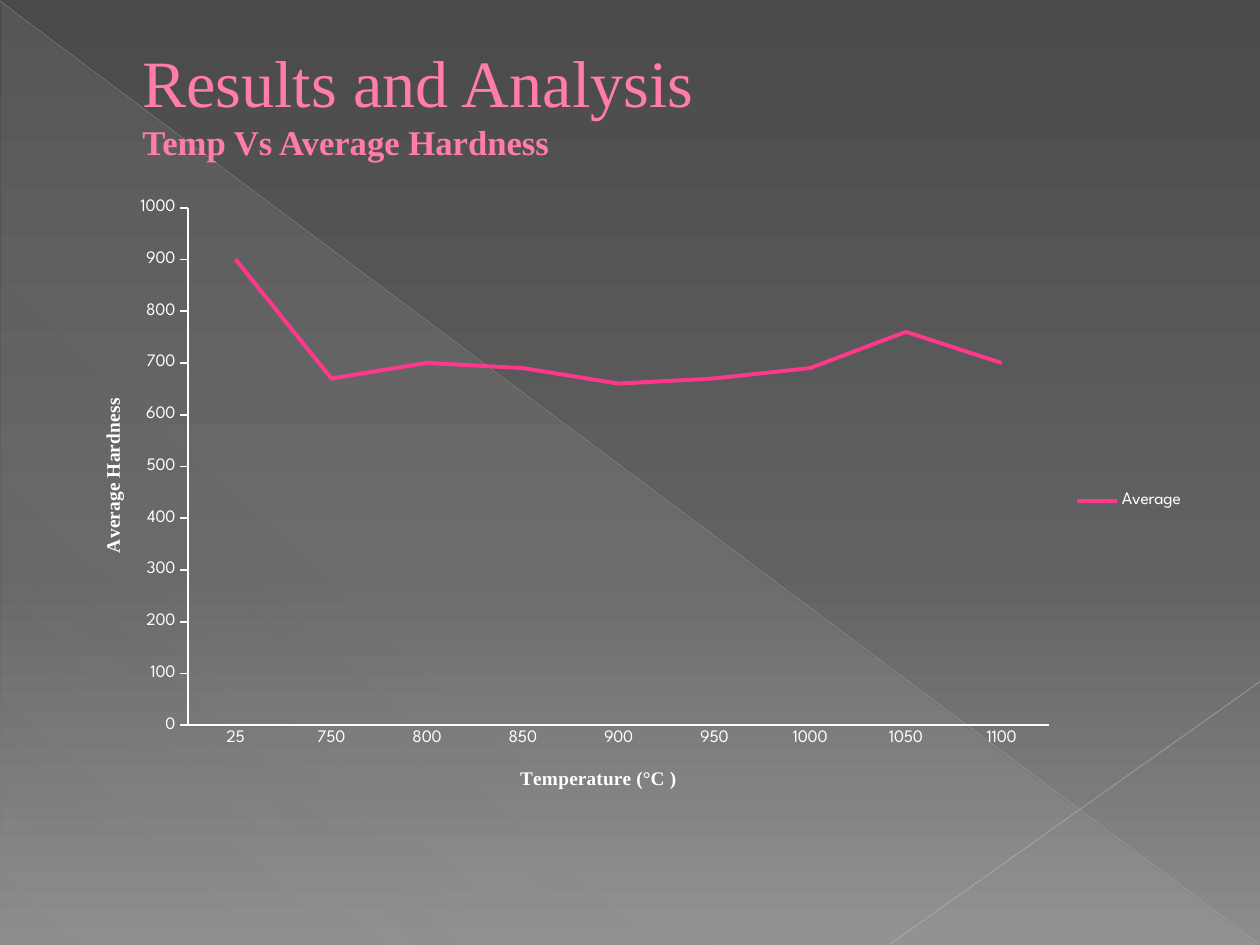
from dataclasses import dataclass

from lxml.etree import SubElement
from pptx import Presentation
from pptx.chart.data import CategoryChartData
from pptx.dml.color import RGBColor
from pptx.enum.chart import XL_CHART_TYPE, XL_LEGEND_POSITION, XL_TICK_MARK
from pptx.enum.shapes import MSO_CONNECTOR, MSO_SHAPE
from pptx.enum.text import MSO_ANCHOR
from pptx.oxml import parse_xml
from pptx.oxml.ns import nsdecls, qn
from pptx.util import Pt

COLORS = {
    "dark": "4A4A4A",
    "middle": "626262",
    "light": "8C8C8C",
    "veil": "D2D2D2",
    "diagonal": "BFBFBF",
    "corner": "C6C6C6",
    "heading": "FF7DA7",
    "series": "FF388C",
    "text": "FFFFFF",
}
SERIF = "Times New Roman"
SANS = "League Spartan"


@dataclass
class Stop:
    position: int
    color: str
    opacity: int = 100


@dataclass
class Ray:
    start: tuple[float, float]
    end: tuple[float, float]
    color: str
    width: float
    opacity: int


@dataclass
class Heading:
    text: str
    size: float
    bold: bool


@dataclass
class AxisStyle:
    title: str
    tick: XL_TICK_MARK
    left: float
    top: float


BACKGROUND = [Stop(0, "dark"), Stop(60, "middle"), Stop(100, "light")]
VEIL = [Stop(0, "veil", 10), Stop(70, "veil", 8), Stop(100, "veil", 1)]
RAYS = [
    Ray((0, 0.7), (719.3, 539.3), "diagonal", 0.39, 35),
    Ray((720, 389.5), (509, 539.3), "corner", 0.47, 45),
]
HEADINGS = [
    Heading("Results and Analysis", 37.8, False),
    Heading("Temp Vs Average Hardness", 19.8, True),
]
CATEGORY_AXIS = AxisStyle("Temperature (°C )", XL_TICK_MARK.NONE, 0.4, 0.92)
VALUE_AXIS = AxisStyle("Average Hardness", XL_TICK_MARK.OUTSIDE, 0.03, 0.33)
HARDNESS = {
    "25": 900, "750": 670, "800": 700, "850": 690, "900": 660,
    "950": 670, "1000": 690, "1050": 760, "1100": 700,
}


def rgb(name: str) -> RGBColor:
    return RGBColor.from_string(COLORS[name])


def set_gradient(fill, stops: list[Stop], angle: int) -> None:
    fill.gradient()
    fill.gradient_angle = 360 - angle
    stop_list = fill._fill._gradFill.find(qn("a:gsLst"))
    stop_list.clear()
    for stop in stops:
        stop_list.append(parse_xml(
            f'<a:gs {nsdecls("a")} pos="{stop.position * 1000}">'
            f'<a:srgbClr val="{COLORS[stop.color]}">'
            f'<a:alpha val="{stop.opacity * 1000}"/></a:srgbClr></a:gs>'
        ))


def draw_veil(slide) -> None:
    shape = slide.shapes.add_shape(
        MSO_SHAPE.RIGHT_TRIANGLE, Pt(0.7), Pt(1.4), Pt(718.6), Pt(538.6)
    )
    shape.shadow.inherit = False
    shape.line.fill.background()
    set_gradient(shape.fill, VEIL, 133)


def draw_ray(slide, ray: Ray) -> None:
    points = [Pt(value) for value in (*ray.start, *ray.end)]
    connector = slide.shapes.add_connector(MSO_CONNECTOR.STRAIGHT, *points)
    connector.line.width = Pt(ray.width)
    connector.line.color.rgb = rgb(ray.color)
    properties = connector._element.spPr
    color = next(properties.iter(qn("a:srgbClr")))
    SubElement(color, qn("a:alpha")).set("val", str(ray.opacity * 1000))
    SubElement(properties, qn("a:effectLst"))


def draw_headings(slide) -> None:
    frame = slide.shapes.add_textbox(Pt(36), Pt(21), Pt(648), Pt(110)).text_frame
    frame.word_wrap = True
    frame.vertical_anchor = MSO_ANCHOR.TOP
    frame.margin_left = Pt(45.4)
    frame.margin_top = Pt(2.6)
    for index, heading in enumerate(HEADINGS):
        paragraph = frame.add_paragraph() if index else frame.paragraphs[0]
        paragraph.text = heading.text
        paragraph.font.name = SERIF
        paragraph.font.size = Pt(heading.size)
        paragraph.font.bold = heading.bold
        paragraph.font.color.rgb = rgb("heading")


def layout_xml(left: float, top: float, extra: str = ""):
    return parse_xml(
        f'<c:layout {nsdecls("c")}><c:manualLayout>{extra and "<c:layoutTarget val=%r/>" % "inner"}'
        '<c:xMode val="edge"/><c:yMode val="edge"/>'
        f'<c:x val="{left}"/><c:y val="{top}"/>{extra}</c:manualLayout></c:layout>'
    )


def replace_layout(parent, index: int, layout) -> None:
    for previous in parent.findall(qn("c:layout")):
        parent.remove(previous)
    parent.insert(index, layout)


def style_axis(axis, style: AxisStyle) -> None:
    axis.has_major_gridlines = False
    axis.major_tick_mark = style.tick
    axis.minor_tick_mark = XL_TICK_MARK.NONE
    axis.format.line.color.rgb = rgb("text")
    axis.format.line.width = Pt(1)
    frame = axis.axis_title.text_frame
    frame.text = style.title
    font = frame.paragraphs[0].font
    font.name = SERIF
    font.size = Pt(11)
    font.bold = True
    font.color.rgb = rgb("text")
    replace_layout(axis.axis_title._element, 1, layout_xml(style.left, style.top))


def draw_chart(slide) -> None:
    data = CategoryChartData()
    data.categories = list(HARDNESS)
    data.add_series("Average", list(HARDNESS.values()))
    chart = slide.shapes.add_chart(
        XL_CHART_TYPE.LINE, Pt(36), Pt(108), Pt(648), Pt(356.4), data
    ).chart
    chart.has_title = False
    chart.font.name = SANS
    chart.font.size = Pt(10)
    chart.font.color.rgb = rgb("text")
    chart.has_legend = True
    chart.legend.position = XL_LEGEND_POSITION.RIGHT
    chart.legend.include_in_layout = False
    style_axis(chart.category_axis, CATEGORY_AXIS)
    style_axis(chart.value_axis, VALUE_AXIS)
    chart.value_axis.minimum_scale = 0
    chart.value_axis.maximum_scale = 1000
    chart.value_axis.major_unit = 100
    plot = chart.plots[0]
    plot.vary_by_categories = False
    series = plot.series[0]
    series.smooth = False
    series.format.line.color.rgb = rgb("series")
    series.format.line.width = Pt(2.25)
    plot_area = chart._chartSpace.chart.plotArea
    size = '<c:w val="0.76"/><c:h val="0.83"/>'
    replace_layout(plot_area, 0, layout_xml(0.11, 0.03, size))


def main() -> None:
    presentation = Presentation()
    presentation.slide_width = Pt(720)
    presentation.slide_height = Pt(540)
    slide = presentation.slides.add_slide(presentation.slide_layouts[6])
    set_gradient(slide.background.fill, BACKGROUND, 90)
    draw_veil(slide)
    for ray in RAYS:
        draw_ray(slide, ray)
    draw_headings(slide)
    draw_chart(slide)
    presentation.save("out.pptx")


if __name__ == "__main__":
    main()
